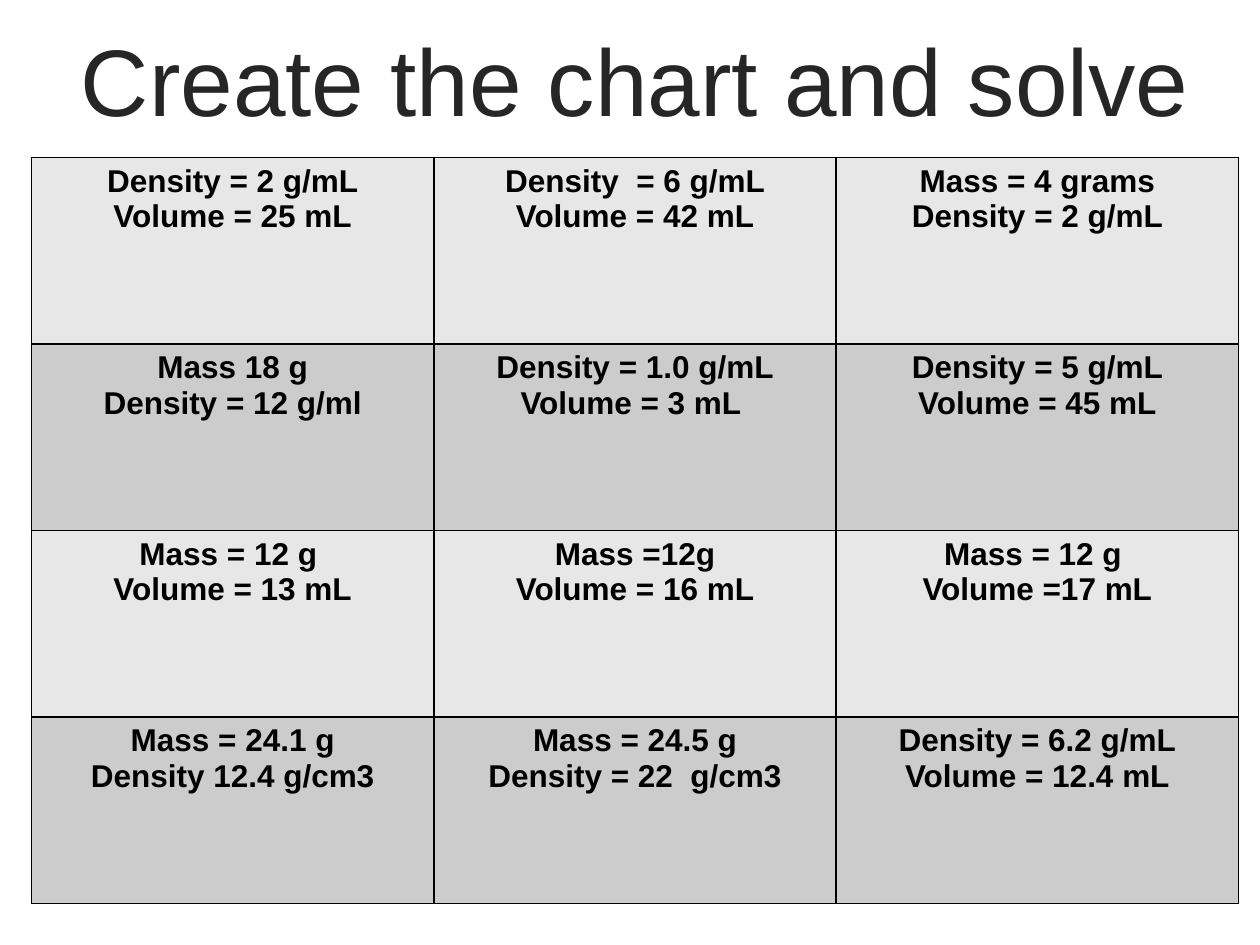
from lxml import etree
from pptx import Presentation
from pptx.dml.color import RGBColor
from pptx.enum.text import MSO_ANCHOR, PP_ALIGN
from pptx.oxml.ns import qn
from pptx.util import Inches, Pt

CENTER = PP_ALIGN.CENTER
MIDDLE = MSO_ANCHOR.MIDDLE
TOP = MSO_ANCHOR.TOP

TITLE_COLOR = RGBColor(0x26, 0x26, 0x26)
BLACK = RGBColor(0, 0, 0)
ROW_FILLS = (RGBColor(0xE7, 0xE7, 0xE7), RGBColor(0xCC, 0xCC, 0xCC))

TITLE = "Create the chart and solve"
PROBLEMS = [
    [
        ("Density = 2 g/mL", "Volume = 25 mL"),
        ("Density  = 6 g/mL", "Volume = 42 mL"),
        ("Mass = 4 grams", "Density = 2 g/mL"),
    ],
    [
        ("Mass 18 g", "Density = 12 g/ml"),
        ("Density = 1.0 g/mL", "Volume = 3 mL "),
        ("Density = 5 g/mL", "Volume = 45 mL"),
    ],
    [
        ("Mass = 12 g ", "Volume = 13 mL"),
        ("Mass =12g", "Volume = 16 mL"),
        ("Mass = 12 g ", "Volume =17 mL"),
    ],
    [
        ("Mass = 24.1 g", "Density 12.4 g/cm3"),
        ("Mass = 24.5 g", "Density = 22  g/cm3"),
        ("Density = 6.2 g/mL", "Volume = 12.4 mL"),
    ],
]

LEFT = 0.25
WIDTH = 9.58
TITLE_HEIGHT = 1.25
TABLE_HEIGHT = 5.92


def write_text(frame, lines, size, color, bold=False, anchor=TOP):
    frame.word_wrap = True
    frame.vertical_anchor = anchor
    for index, line in enumerate(lines):
        paragraph = frame.paragraphs[0] if index == 0 else frame.add_paragraph()
        paragraph.alignment = CENTER
        run = paragraph.add_run()
        run.text = line
        run.font.name = "Arial"
        run.font.size = Pt(size)
        run.font.bold = bold
        run.font.color.rgb = color


def add_borders(cell, color, width):
    properties = cell._tc.get_or_add_tcPr()
    for side in ("a:lnL", "a:lnR", "a:lnT", "a:lnB"):
        line = etree.SubElement(properties, qn(side), w=str(Pt(width)))
        fill = etree.SubElement(line, qn("a:solidFill"))
        etree.SubElement(fill, qn("a:srgbClr"), val=str(color))


def add_problem_table(slide):
    row_count, column_count = len(PROBLEMS), len(PROBLEMS[0])
    table = slide.shapes.add_table(
        row_count, column_count, Inches(LEFT), Inches(TITLE_HEIGHT),
        Inches(WIDTH), Inches(TABLE_HEIGHT),
    ).table
    for column in table.columns:
        column.width = Inches(WIDTH / column_count)
    for row_index, problems in enumerate(PROBLEMS):
        table.rows[row_index].height = Inches(TABLE_HEIGHT / row_count)
        for column_index, lines in enumerate(problems):
            cell = table.cell(row_index, column_index)
            add_borders(cell, BLACK, 1)
            cell.fill.solid()
            cell.fill.fore_color.rgb = ROW_FILLS[row_index % len(ROW_FILLS)]
            write_text(cell.text_frame, lines, size=18, color=BLACK, bold=True)


def main():
    presentation = Presentation()
    presentation.slide_width = Inches(10)
    presentation.slide_height = Inches(7.5)
    slide = presentation.slides.add_slide(presentation.slide_layouts[6])
    title = slide.shapes.add_textbox(
        Inches(LEFT), Inches(0), Inches(WIDTH), Inches(TITLE_HEIGHT)
    )
    write_text(title.text_frame, [TITLE], size=54, color=TITLE_COLOR, anchor=MIDDLE)
    add_problem_table(slide)
    presentation.save("out.pptx")


if __name__ == "__main__":
    main()
